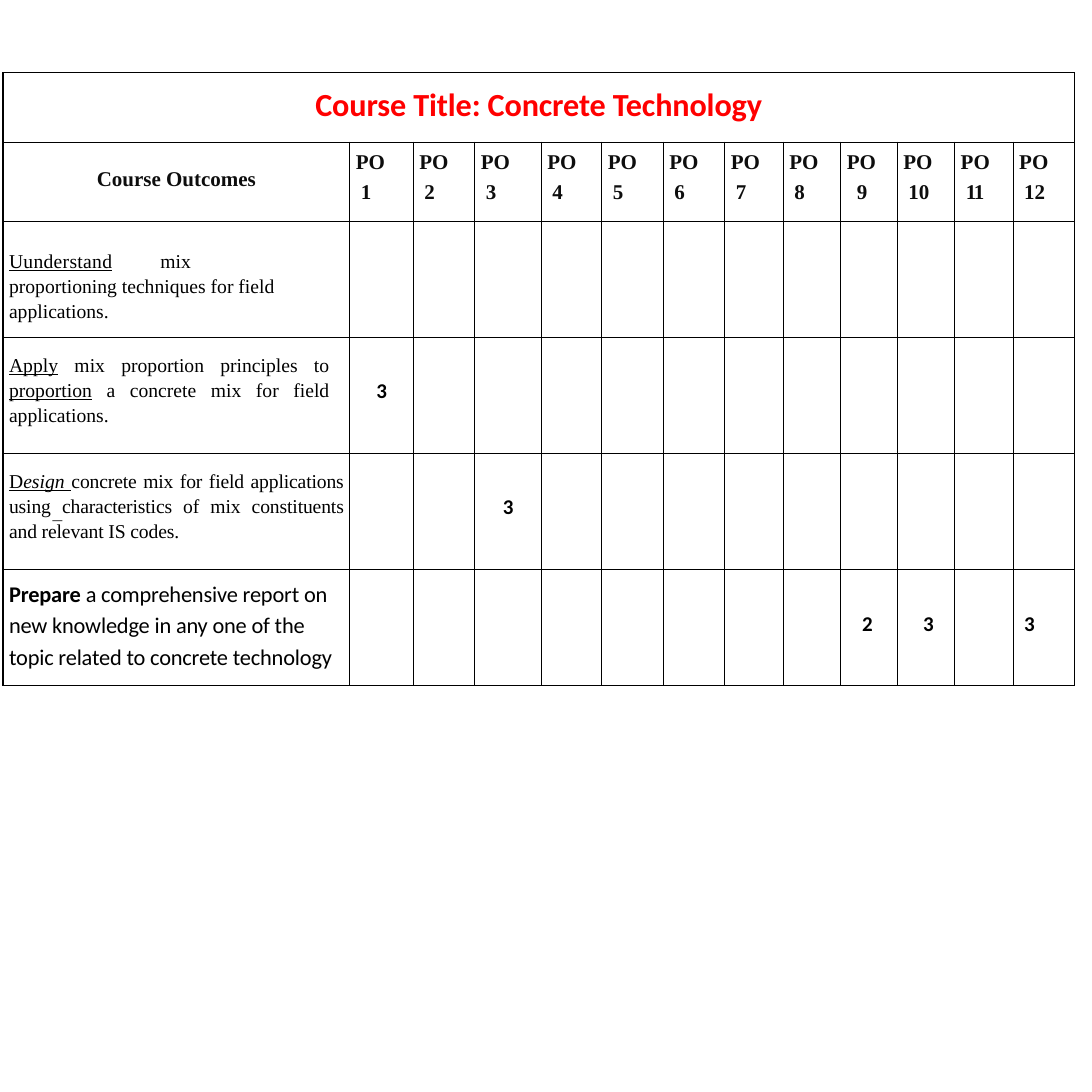
from lxml import etree
from pptx import Presentation
from pptx import util as u
from pptx.dml.color import RGBColor
from pptx.enum import shapes, text
from pptx.oxml import ns

PX = 9144  # EMU per px, 100 px to the inch
RED = RGBColor(0xFF, 0x00, 0x00)
BLACK = RGBColor(0x00, 0x00, 0x00)
NEAR_BLACK = RGBColor(0x0D, 0x0D, 0x0D)
SERIF, SANS = "Times New Roman", "Calibri"
LEFT, CENTER, JUSTIFY = text.PP_ALIGN.LEFT, text.PP_ALIGN.CENTER, text.PP_ALIGN.JUSTIFY

COLUMNS = [344, 63, 61, 66, 60, 61, 61, 58, 57, 56, 57, 58, 61]
ROWS = [69, 79, 115, 115, 115, 115]

# Letter spacing by style letter, in hundredths of a point
TRACKING = {"t": "-10", "x": "-80", "w": "20"}

# Each outcome: runs of (words, styles), then font, size, alignment,
# top and right margins
OUTCOMES = [
    ([("Uunderstand", "uw"),
      ("\tmix\tproportioning techniques for field applications.", "")],
     SERIF, 14, LEFT, 26, 40),
    ([("Apply", "u"), (" mix proportion principles to ", ""), ("proportion", "u"),
      (" a concrete mix for field applications.", "")],
     SERIF, 14, JUSTIFY, 14, 20),
    ([("D", "u"), ("esign ", "ui"),
      ("concrete mix for field applications using characteristics of mix "
       "constituents and relevant IS codes.", "t")],
     SERIF, 14, JUSTIFY, 14, 6),
    ([("Prepare ", "bt"),
      ("a comprehensive report on new knowledge in any one of the topic "
       "related to concrete technology", "t")],
     SANS, 16, LEFT, 7, 0),
]

# Each score: row, PO number, value, alignment, left indent, top and right margins
SCORES = [
    (3, 1, "3", CENTER, 0, 40, 0),
    (4, 3, "3", CENTER, 0, 40, 0),
    (5, 9, "2", CENTER, 0, 42, 3),
    (5, 10, "3", CENTER, 5, 42, 0),
    (5, 12, "3", LEFT, 11, 42, 0),
]


def add_xml(parent, tag, index=None, **attributes):
    element = etree.Element(ns.qn(tag), attributes)
    parent.insert(len(parent) if index is None else index, element)
    return element


def outline_cell(cell):
    """Clear the fill and margins, and rule all four sides in black."""
    cell.fill.background()
    cell.margin_left = cell.margin_right = cell.margin_top = cell.margin_bottom = 0
    properties = cell._tc.get_or_add_tcPr()
    for index, side in enumerate(("a:lnL", "a:lnR", "a:lnT", "a:lnB")):
        border = add_xml(properties, side, index, w=str(u.Pt(1)))
        add_xml(add_xml(border, "a:solidFill"), "a:srgbClr", val=str(BLACK))


def write(cell, runs, font, size, color=BLACK, align=LEFT, top=0,
          indent=0, hanging=0, spacing=1.0, right=0):
    """Write one paragraph whose runs carry b, i, u or tracking styles."""
    cell.margin_top, cell.margin_right = top * PX, right * PX
    paragraph = cell.text_frame.paragraphs[0]
    paragraph.alignment = align
    paragraph.line_spacing = spacing
    layout = paragraph._p.get_or_add_pPr()
    layout.set("marL", str((indent + hanging) * PX))
    layout.set("indent", str(-hanging * PX))
    for words, styles in runs:
        run = paragraph.add_run()
        run.text = words
        run.font.name, run.font.size = font, u.Pt(size)
        run.font.color.rgb = color
        run.font.bold = "b" in styles
        run.font.italic = "i" in styles
        run.font.underline = "u" in styles
        for style in styles:
            if style in TRACKING:
                run.font._element.set("spc", TRACKING[style])
    return paragraph


def write_headings(table):
    title = table.cell(0, 0)
    title.merge(table.cell(0, len(COLUMNS) - 1))
    write(title, [("Course Title: Concrete Technology", "bt")], SANS, 23, RED,
          CENTER, top=13)
    write(table.cell(1, 0), [("Course Outcomes", "b")], SERIF, 15, NEAR_BLACK,
          top=25, indent=93)
    for number in range(1, len(COLUMNS)):
        # The narrow text width puts the number under "PO"
        write(table.cell(1, number),
              [("PO ", "b"), (str(number), "bx" if number == 11 else "b")],
              SERIF, 15, NEAR_BLACK, top=1, indent=6,
              hanging=10 if number == 9 else 5, spacing=1.32,
              right=COLUMNS[number] - 48)


def write_outcomes(table):
    for row, (runs, font, size, align, top, right) in enumerate(OUTCOMES, 2):
        outcome = write(table.cell(row, 0), runs, font, size, align=align,
                        top=top, indent=6, spacing=1.15, right=right)
        if row == 2:
            stops = add_xml(outcome._p.get_or_add_pPr(), "a:tabLst")
            for position in (153, 230):
                add_xml(stops, "a:tab", pos=str(position * PX), algn="l")


def add_outcome_table(slide, left, top):
    table = slide.shapes.add_table(len(ROWS), len(COLUMNS), left * PX, top * PX,
                                   sum(COLUMNS) * PX, sum(ROWS) * PX).table
    table.first_row = table.horz_banding = False
    for column, width in zip(table.columns, COLUMNS):
        column.width = width * PX
    for row, height in zip(table.rows, ROWS):
        row.height = height * PX
    for cell in table.iter_cells():
        outline_cell(cell)
    write_headings(table)
    write_outcomes(table)
    for row, number, value, align, indent, margin, right in SCORES:
        write(table.cell(row, number), [(value, "b")], SANS, 15, align=align,
              top=margin, indent=indent, right=right)


def add_dash(slide, left, top, width, height):
    dash = slide.shapes.add_shape(shapes.MSO_SHAPE.RECTANGLE, left * PX, top * PX,
                                  width * PX, height * PX)
    dash.shadow.inherit = False
    dash.fill.solid()
    dash.fill.fore_color.rgb = BLACK
    dash.line.fill.background()


def main():
    deck = Presentation()
    deck.slide_width = deck.slide_height = 1083 * PX
    slide = deck.slides.add_slide(deck.slide_layouts[6])
    # Short dash behind the table
    add_dash(slide, 52, 516, 10, 1)
    # Course outcomes against programme outcomes
    add_outcome_table(slide, 3, 72)
    deck.save("out.pptx")


if __name__ == "__main__":
    main()
